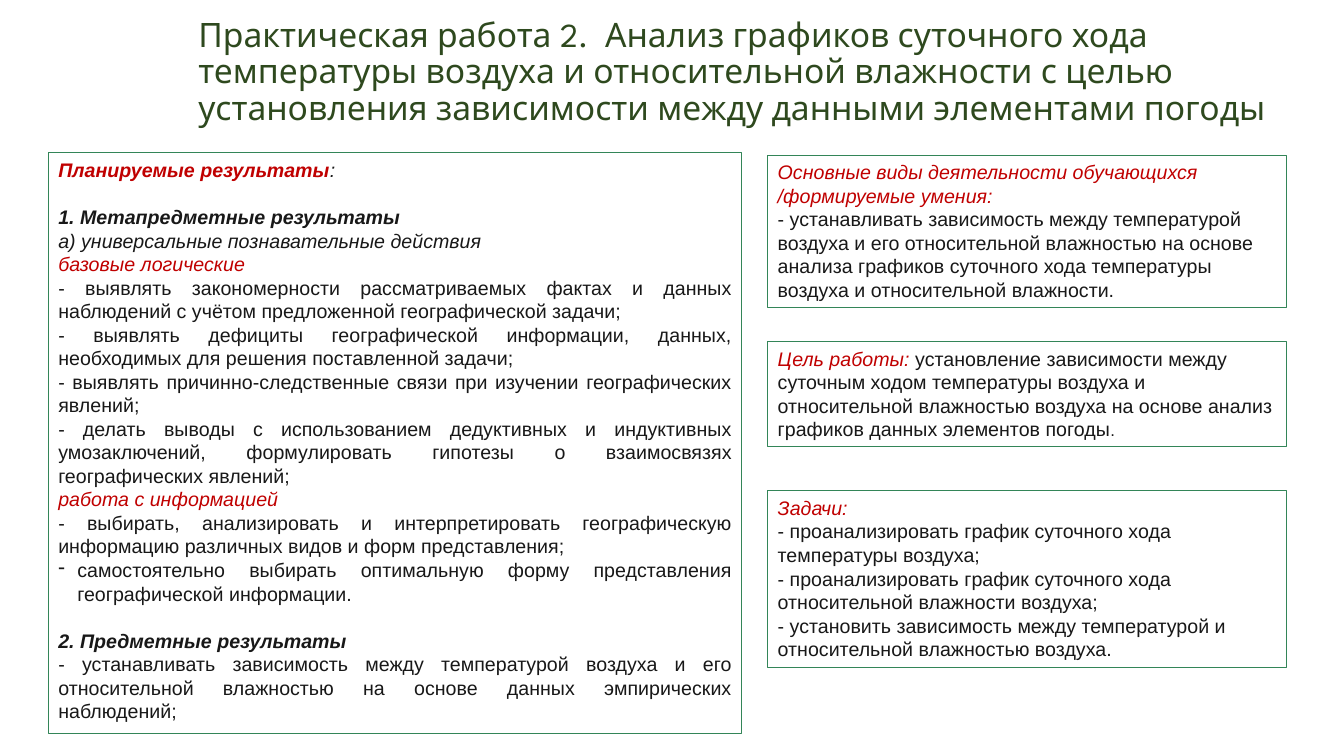
from dataclasses import dataclass

from lxml.etree import SubElement
from pptx import Presentation
from pptx.dml.color import RGBColor
from pptx.enum.shapes import MSO_SHAPE
from pptx.enum.text import MSO_ANCHOR, MSO_AUTO_SIZE, PP_ALIGN
from pptx.oxml.ns import qn
from pptx.util import Cm, Pt


@dataclass(frozen=True)
class Theme:
    title_font: str = "League Spartan"
    body_font: str = "Arial"
    title_color: str = "2E491E"
    heading_color: str = "C00000"
    text_color: str = "181818"
    frame_color: str = "338558"
    title_size: float = 24
    body_size: float = 14
    small_size: float = 12
    section_gap: float = 16.9
    frame_width: float = 0.75


THEME = Theme()


def add_span(para, text, font=THEME.body_font, size=THEME.body_size,
             color=THEME.text_color, bold=False, italic=False):
    span = para.add_run()
    span.text = text
    span.font.name = font
    span.font.size = Pt(size)
    span.font.color.rgb = RGBColor.from_string(color)
    span.font.bold = bold
    span.font.italic = italic


def add_heading(para, text, bold=False):
    add_span(para, text, color=THEME.heading_color, bold=bold, italic=True)


def add_para(frame, align=PP_ALIGN.LEFT, gap=0):
    """Return the empty first paragraph, or a new one after the text."""
    para = frame.paragraphs[0]
    if para.runs:
        para = frame.add_paragraph()
    para.alignment = align
    if gap:
        para.space_before = Pt(gap)
    return para


def add_dash_bullet(para, indent):
    properties = para._p.get_or_add_pPr()
    properties.set("marL", str(indent))
    properties.set("indent", str(-indent))
    SubElement(properties, qn("a:buChar"), char="-")


def add_frame(page, left, top, width, height):
    box = page.shapes.add_shape(MSO_SHAPE.RECTANGLE, left, top, width, height)
    box.shadow.inherit = False
    box.fill.background()
    box.line.color.rgb = RGBColor.from_string(THEME.frame_color)
    box.line.width = Pt(THEME.frame_width)
    frame = box.text_frame
    frame.word_wrap = True
    frame.auto_size = MSO_AUTO_SIZE.SHAPE_TO_FIT_TEXT
    frame.vertical_anchor = MSO_ANCHOR.TOP
    return frame


def add_title(page, left, top, width, height):
    frame = page.shapes.add_textbox(left, top, width, height).text_frame
    frame.word_wrap = True
    frame.vertical_anchor = MSO_ANCHOR.MIDDLE
    para = add_para(frame)
    para.line_spacing = 0.9
    add_span(para, "Практическая работа 2.  Анализ графиков суточного хода "
             "температуры воздуха и относительной влажности с целью "
             "установления зависимости между данными элементами погоды",
             font=THEME.title_font, size=THEME.title_size, color=THEME.title_color)


def add_results(page, left, top, width, height):
    frame = add_frame(page, left, top, width, height)

    def justified(gap=0):
        return add_para(frame, PP_ALIGN.JUSTIFY, gap)

    para = add_para(frame)
    add_heading(para, "Планируемые результаты", bold=True)
    add_span(para, ":", italic=True)

    # Metasubject results
    add_span(justified(THEME.section_gap), "1. Метапредметные результаты",
             bold=True, italic=True)
    add_span(justified(), "а) универсальные познавательные действия", italic=True)
    add_heading(justified(), "базовые логические")
    for text in (
        "- выявлять закономерности рассматриваемых фактах и данных наблюдений "
        "с учётом предложенной географической задачи;",
        "- выявлять дефициты географической информации, данных, необходимых "
        "для решения поставленной задачи;",
        "- выявлять причинно-следственные связи при изучении географических явлений; ",
        "- делать выводы с использованием дедуктивных и индуктивных умозаключений, "
        "формулировать гипотезы о взаимосвязях географических явлений;",
    ):
        add_span(justified(), text)
    add_heading(justified(), "работа с информацией")
    add_span(justified(), "- выбирать, анализировать и интерпретировать географическую "
             "информацию различных видов и форм представления;")
    para = justified()
    add_dash_bullet(para, Cm(0.48))
    add_span(para, "самостоятельно выбирать оптимальную форму представления "
             "географической информации.")

    # Subject results
    add_span(justified(THEME.section_gap), "2. Предметные результаты",
             bold=True, italic=True)
    add_span(justified(), "- устанавливать зависимость между температурой воздуха и его "
             "относительной влажностью на основе данных эмпирических наблюдений;")


def add_list_card(page, left, top, width, height, heading, items):
    frame = add_frame(page, left, top, width, height)
    add_heading(add_para(frame), heading)
    for item in items:
        add_span(add_para(frame), item)


def add_goal(page, left, top, width, height):
    para = add_para(add_frame(page, left, top, width, height))
    add_heading(para, "Цель работы: ")
    add_span(para, "установление зависимости между суточным ходом температуры воздуха "
             "и относительной влажностью воздуха на основе анализ графиков данных "
             "элементов погоды")
    add_span(para, ".", size=THEME.small_size)


def main():
    deck = Presentation()
    deck.slide_width, deck.slide_height = Cm(33.87), Cm(19.05)
    page = deck.slides.add_slide(deck.slide_layouts[6])

    add_title(page, Cm(4.75), Cm(0), Cm(28.68), Cm(3.68))
    add_results(page, Cm(1.22), Cm(3.85), Cm(17.48), Cm(14.63))

    # Right column
    left, width = Cm(19.35), Cm(13.08)
    add_list_card(page, left, Cm(3.91), width, Cm(3.84),
                  "Основные виды деятельности обучающихся /формируемые умения:",
                  ["- устанавливать зависимость между температурой воздуха и его "
                   "относительной влажностью на основе анализа графиков суточного хода "
                   "температуры воздуха и относительной влажности."])
    add_goal(page, left, Cm(8.61), width, Cm(2.64))
    add_list_card(page, left, Cm(12.37), width, Cm(4.45), "Задачи:",
                  ["- проанализировать график суточного хода температуры воздуха;",
                   "- проанализировать график суточного хода относительной влажности воздуха;",
                   "- установить зависимость между температурой и относительной "
                   "влажностью воздуха."])

    deck.save("out.pptx")


if __name__ == "__main__":
    main()
